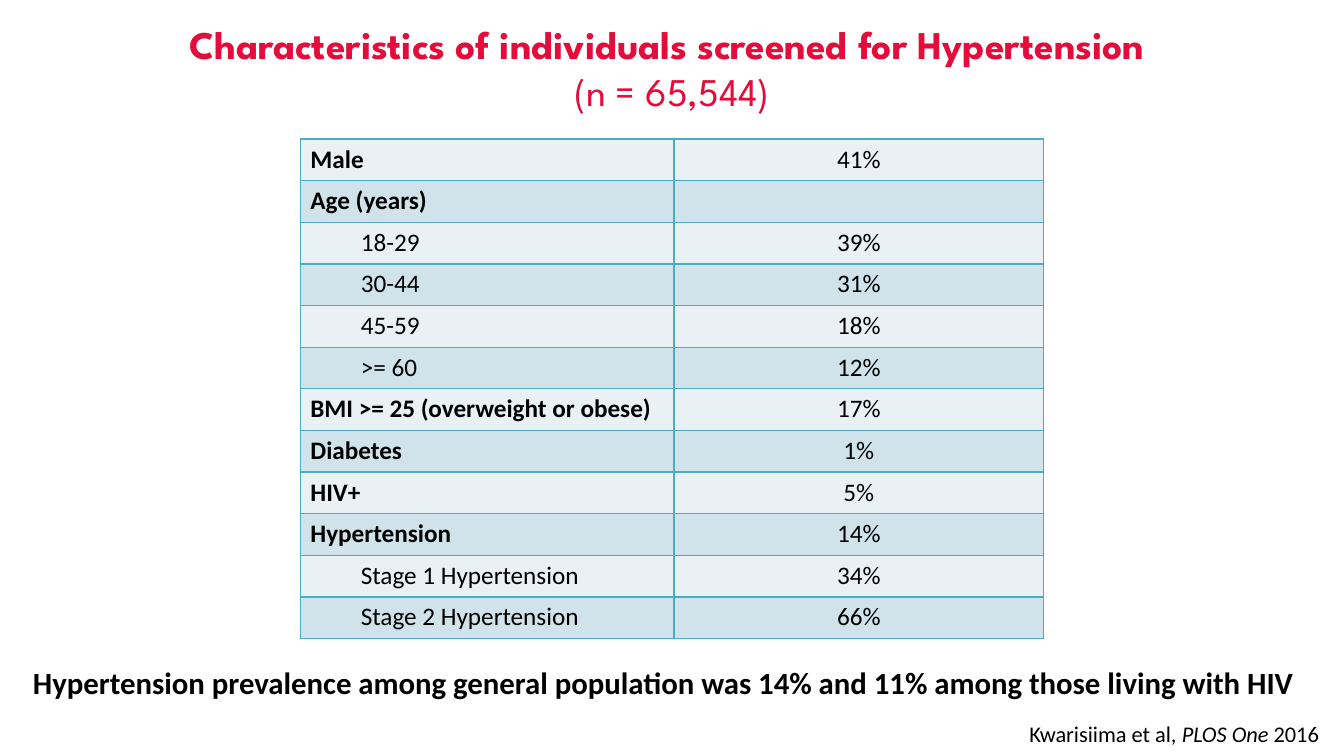
from lxml.etree import SubElement
from pptx import Presentation
from pptx.dml.color import RGBColor
from pptx.enum.text import MSO_ANCHOR as Anchor, PP_ALIGN as Align
from pptx.oxml.ns import qn
from pptx.util import Emu, Inches, Pt

CRIMSON = RGBColor(0xE4, 0x0C, 0x3A)
BLACK = RGBColor(0x00, 0x00, 0x00)
TEAL = RGBColor(0x4B, 0xAC, 0xC6)
BANDS = (RGBColor(0xE9, 0xF1, 0xF5), RGBColor(0xD0, 0xE3, 0xEA))

# (label, share of individuals, is a subgroup)
CHARACTERISTICS = [
    ("Male", "41%", False),
    ("Age (years)", "", False),
    ("18-29", "39%", True),
    ("30-44", "31%", True),
    ("45-59", "18%", True),
    (">= 60", "12%", True),
    ("BMI >= 25 (overweight or obese)", "17%", False),
    ("Diabetes", "1%", False),
    ("HIV+", "5%", False),
    ("Hypertension", "14%", False),
    ("Stage 1 Hypertension", "34%", True),
    ("Stage 2 Hypertension", "66%", True),
]


class SlideBuilder:
    """Places elements on a grid of 160 columns and 90 rows."""

    BODY_FONT = "Calibri"
    TITLE_FONT = "League Spartan"
    COLUMNS, ROWS = 160, 90

    def __init__(self, deck):
        self.slide = deck.slides.add_slide(deck.slide_layouts[6])
        self.column = deck.slide_width / self.COLUMNS
        self.row = deck.slide_height / self.ROWS

    def area(self, left, top, width, height):
        return (Emu(round(left * self.column)), Emu(round(top * self.row)),
                Emu(round(width * self.column)), Emu(round(height * self.row)))

    def style(self, paragraph, size, color=BLACK, bold=None, font=BODY_FONT):
        paragraph.font.name = font
        paragraph.font.size = Pt(size)
        paragraph.font.color.rgb = color
        paragraph.font.bold = bold

    def text_box(self, area, anchor=Anchor.TOP):
        """Adds a wrapping text box and returns its first paragraph."""
        frame = self.slide.shapes.add_textbox(*self.area(*area)).text_frame
        frame.word_wrap = True
        frame.vertical_anchor = anchor
        return frame.paragraphs[0]

    def title(self, area, heading, sample):
        paragraph = self.text_box(area, Anchor.MIDDLE)
        paragraph.alignment = Align.CENTER
        paragraph.add_run().text = heading
        paragraph.add_line_break()
        paragraph.add_run().text = sample
        self.style(paragraph, 28, CRIMSON, font=self.TITLE_FONT)
        for run, bold in zip(paragraph.runs, (True, False)):
            run.font.bold = bold

    def statement(self, area, message):
        paragraph = self.text_box(area)
        paragraph.text = message
        self.style(paragraph, 22, bold=True)

    def citation(self, area, authors, journal, year):
        paragraph = self.text_box(area)
        for part in (authors, journal, year):
            run = paragraph.add_run()
            run.text = part
            run.font.italic = part == journal
        self.style(paragraph, 16)

    def borders(self, cell):
        properties = cell._tc.get_or_add_tcPr()
        for side in ("a:lnL", "a:lnR", "a:lnT", "a:lnB"):
            line = SubElement(properties, qn(side), w=str(Pt(1)))
            fill = SubElement(line, qn("a:solidFill"))
            SubElement(fill, qn("a:srgbClr"), val=str(TEAL))

    def table(self, area, label_columns, entries):
        left, top, width, height = self.area(*area)
        table = self.slide.shapes.add_table(
            len(entries), 2, left, top, width, height).table
        table.columns[0].width = Emu(round(label_columns * self.column))
        table.columns[1].width = width - table.columns[0].width
        for index, (label, share, subgroup) in enumerate(entries):
            label_cell, share_cell = table.rows[index].cells
            for cell, text in ((label_cell, label), (share_cell, share)):
                self.borders(cell)
                cell.fill.solid()
                cell.fill.fore_color.rgb = BANDS[index % 2]
                cell.text = text
                is_heading = cell is label_cell and not subgroup
                self.style(cell.text_frame.paragraphs[0], 18, bold=is_heading)
            share_cell.text_frame.paragraphs[0].alignment = Align.CENTER
            if subgroup:
                paragraph = label_cell.text_frame.paragraphs[0]
                paragraph.level = 1
                indent = paragraph._p.get_or_add_pPr()
                indent.set("marL", str(Inches(0.5)))
                indent.set("indent", "0")


def main():
    deck = Presentation()
    deck.slide_width, deck.slide_height = Inches(13.33), Inches(7.5)
    builder = SlideBuilder(deck)
    builder.title((8, 0.5, 144, 15),
                  "Characteristics of individuals screened for Hypertension ",
                  "(n = 65,544)")
    builder.table((35.75, 16.55, 88.5, 59.5), 44.5, CHARACTERISTICS)
    builder.statement(
        (2.75, 78.4, 154.5, 5.6),
        "Hypertension prevalence among general population was 14% "
        "and 11% among those living with HIV")
    builder.citation((121.35, 85.1, 38.65, 4.4),
                     "Kwarisiima et al, ", "PLOS One ", "2016")
    deck.save("out.pptx")


if __name__ == "__main__":
    main()
